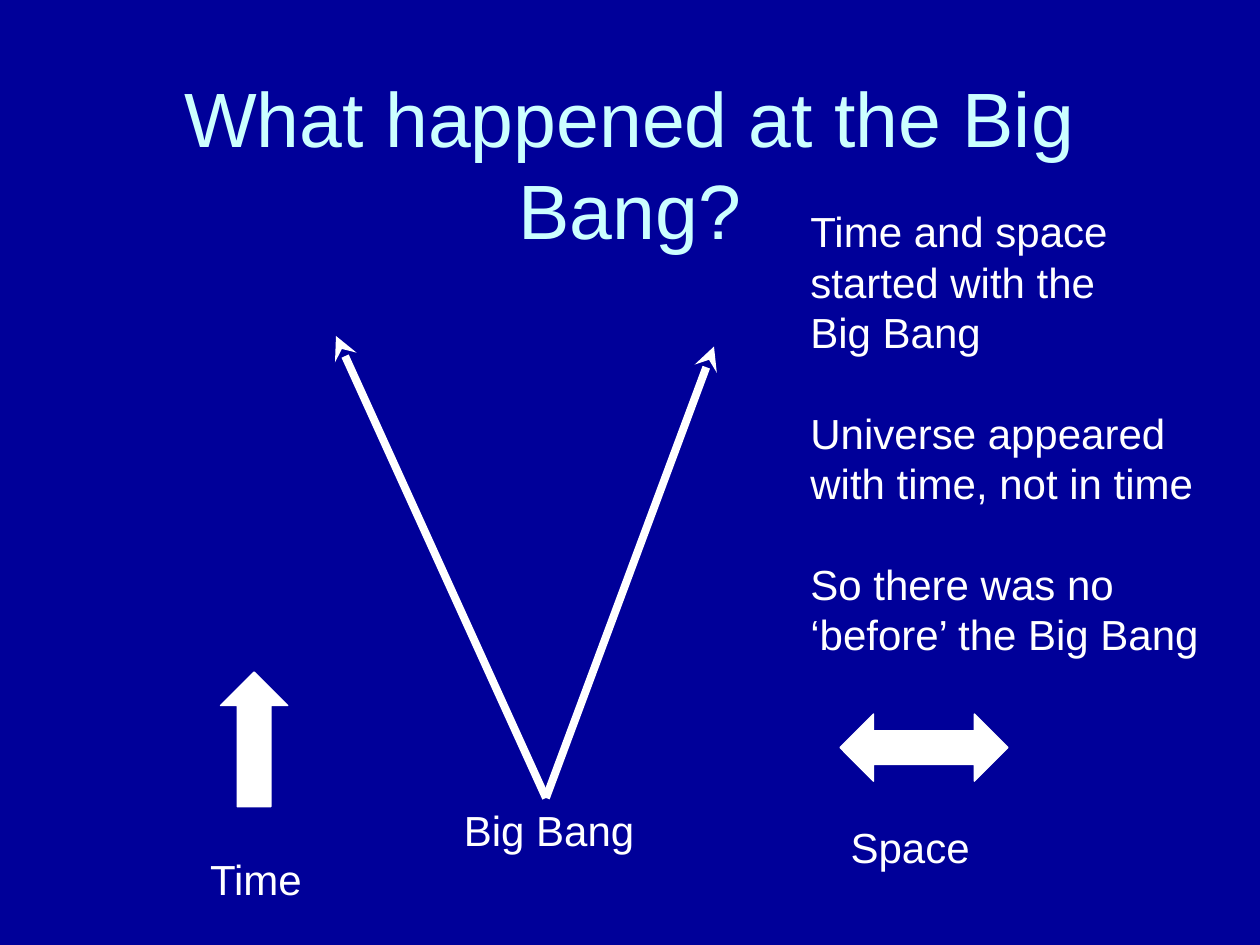
from typing import NamedTuple

from pptx import Presentation
from pptx.dml.color import RGBColor
from pptx.enum.shapes import MSO_CONNECTOR, MSO_SHAPE
from pptx.enum.text import MSO_ANCHOR, MSO_AUTO_SIZE, PP_ALIGN
from pptx.oxml import parse_xml
from pptx.oxml.ns import nsdecls, qn
from pptx.util import Pt

NAVY = RGBColor(0x00, 0x00, 0x99)
PALE_CYAN = RGBColor(0xCC, 0xFF, 0xFF)
WHITE = RGBColor(0xFF, 0xFF, 0xFF)
FONT = "Arial"
LINE_PITCH = 28.7


class Box(NamedTuple):
    left: float
    top: float
    width: float
    height: float


class Point(NamedTuple):
    x: float
    y: float


class Axis(NamedTuple):
    """A block arrow and the label naming the dimension it stands for."""
    name: str
    arrow: MSO_SHAPE
    arrow_box: Box
    label_box: Box


BIG_BANG = Point(312, 456)
UNIVERSE_EDGES = [Point(192, 192), Point(408, 198)]
AXES = [
    Axis("Time", MSO_SHAPE.UP_ARROW,
         Box(126, 384, 38.4, 77), Box(113, 484, 67.7, 36)),
    Axis("Space", MSO_SHAPE.LEFT_RIGHT_ARROW,
         Box(480, 408, 96, 38.4), Box(479, 466, 82.8, 36)),
]
STATEMENTS = [
    ["Time and space", "started with the", "Big Bang"],
    ["Universe appeared with time, not in time"],
    ["So there was no", "‘before’ the Big Bang"],
]


def add_text(slide, box: Box, groups: list[list[str]], *, size: float = 24,
             color: RGBColor = WHITE, align=PP_ALIGN.LEFT,
             anchor=MSO_ANCHOR.TOP, wrap: bool = False,
             autosize=MSO_AUTO_SIZE.SHAPE_TO_FIT_TEXT) -> None:
    """Write groups of paragraphs, with one free line between groups."""
    frame = slide.shapes.add_textbox(*map(Pt, box)).text_frame
    frame.word_wrap = wrap
    frame.auto_size = autosize
    frame.vertical_anchor = anchor
    lines = [(line, group_no > 0 and line_no == 0)
             for group_no, group in enumerate(groups)
             for line_no, line in enumerate(group)]
    for number, (line, opens_group) in enumerate(lines):
        paragraph = frame.add_paragraph() if number else frame.paragraphs[0]
        paragraph.alignment = align
        if opens_group:
            paragraph.space_before = Pt(LINE_PITCH)
        run = paragraph.add_run()
        run.text = line
        run.font.size = Pt(size)
        run.font.name = FONT
        run.font.color.rgb = color


def add_axis(slide, axis: Axis) -> None:
    arrow = slide.shapes.add_shape(axis.arrow, *map(Pt, axis.arrow_box))
    arrow.shadow.inherit = False
    arrow.fill.solid()
    arrow.fill.fore_color.rgb = WHITE
    arrow.line.color.rgb = WHITE
    arrow.line.width = Pt(0.75)
    add_text(slide, axis.label_box, [[axis.name]])


def add_expansion_arrow(slide, start: Point, tip: Point) -> None:
    arrow = slide.shapes.add_connector(
        MSO_CONNECTOR.STRAIGHT, *map(Pt, (*start, *tip)))
    arrow.line.color.rgb = WHITE
    arrow.line.width = Pt(4.5)
    properties = arrow._element.spPr
    properties.find(qn("a:ln")).append(
        parse_xml(f'<a:tailEnd {nsdecls("a")} type="stealth"/>'))
    properties.append(parse_xml(f'<a:effectLst {nsdecls("a")}/>'))


def main() -> None:
    deck = Presentation()
    deck.slide_width, deck.slide_height = Pt(720), Pt(540)
    slide = deck.slides.add_slide(deck.slide_layouts[6])
    slide.background.fill.solid()
    slide.background.fill.fore_color.rgb = NAVY

    add_text(slide, Box(54, 48, 612, 90), [["What happened at the Big Bang?"]],
             size=44, color=PALE_CYAN, align=PP_ALIGN.CENTER,
             anchor=MSO_ANCHOR.MIDDLE, wrap=True, autosize=MSO_AUTO_SIZE.NONE)
    for axis in AXES:
        add_axis(slide, axis)
    for edge in UNIVERSE_EDGES:
        add_expansion_arrow(slide, BIG_BANG, edge)
    add_text(slide, Box(456, 114, 237.6, 265.7), STATEMENTS, wrap=True)
    add_text(slide, Box(258, 456, 111.6, 36), [["Big Bang"]])

    deck.save("out.pptx")


if __name__ == "__main__":
    main()
